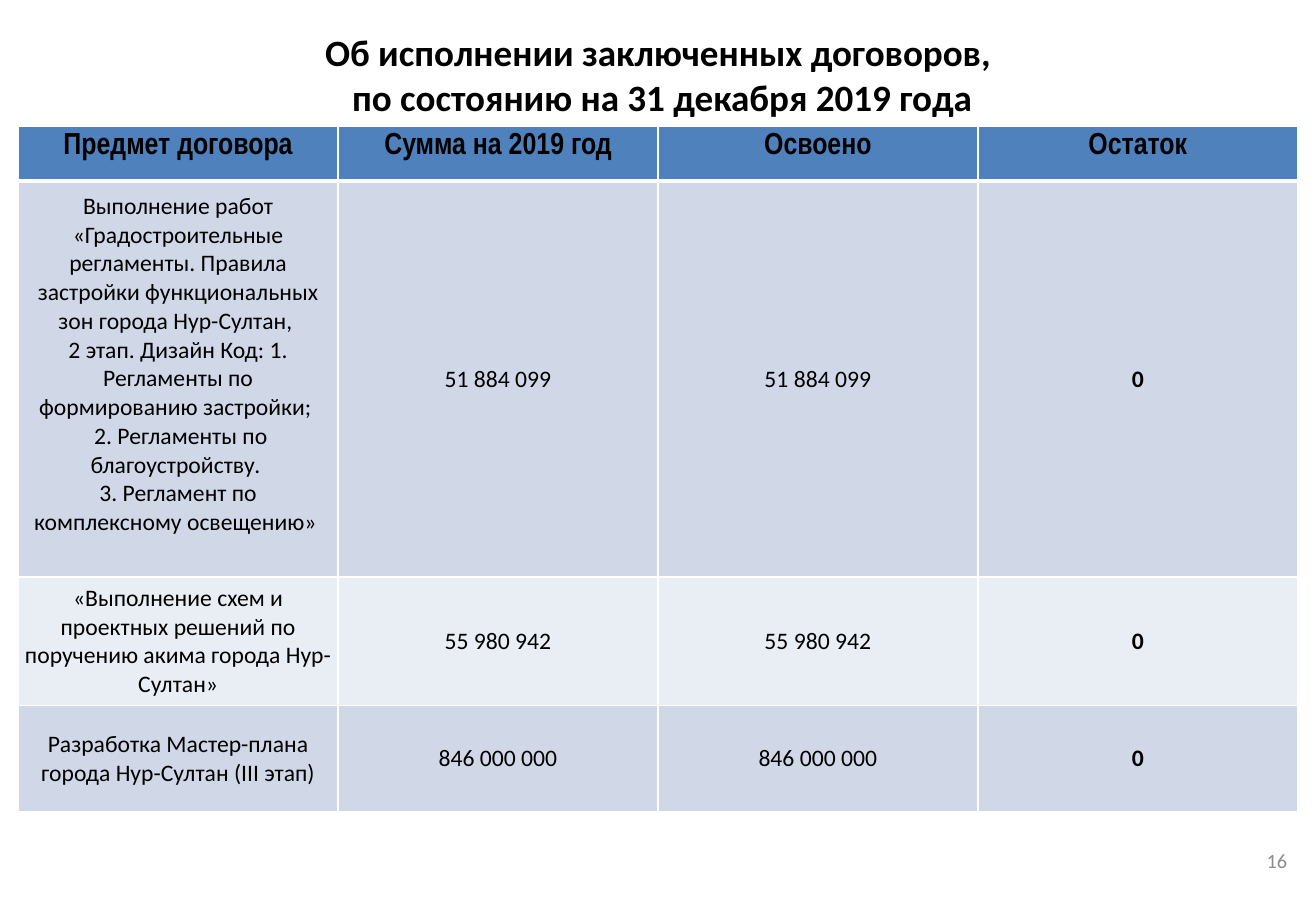
import dataclasses

import lxml.etree
import pptx
import pptx.dml.color
import pptx.enum.text
import pptx.oxml.ns
import pptx.util

PX = 9144  # EMU in one px, 100 px to the inch
ALIGN = pptx.enum.text.PP_ALIGN
ANCHOR = pptx.enum.text.MSO_ANCHOR


@dataclasses.dataclass(frozen=True)
class Theme:
    body_font: str = "Calibri"
    header_font: str = "Arial Narrow"
    ink: str = "000000"
    muted: str = "8C8C8C"
    header_fill: str = "4F81BD"
    bands: tuple = ("D0D8E8", "E9EDF4")
    grid: str = "FFFFFF"
    title_size: int = 22
    header_size: int = 18
    body_size: int = 14
    number_size: int = 12


THEME = Theme()

TITLE = "Об исполнении заключенных договоров,\n по состоянию на 31 декабря 2019 года"
HEADERS = ["Предмет договора", "Сумма на 2019 год", "Освоено", "Остаток"]
# Each contract: subject paragraphs, sum, spent, balance
CONTRACTS = [
    (["Выполнение работ «Градостроительные регламенты. Правила застройки "
      "функциональных зон города Нур-Султан, ",
      "2 этап. Дизайн Код: 1. Регламенты по формированию застройки; \n"
      " 2. Регламенты по благоустройству. ",
      "3. Регламент по комплексному освещению» "],
     "51 884 099", "51 884 099", "0"),
    (["«Выполнение схем и проектных решений по поручению акима города Нур-Султан»"],
     "55 980 942", "55 980 942", "0"),
    (["Разработка Мастер-плана города Нур-Султан (III этап)"],
     "846 000 000", "846 000 000", "0"),
]
ROW_HEIGHTS = [45, 326, 106, 87]
HEADER_INSET = 5  # keeps the headings clear of the table's top edge
LIST_TAIL = 24    # free line under the long list of works
TIGHT_ROW = 2     # row whose text runs nearly edge to edge


def px(length):
    return pptx.util.Emu(length * PX)


def rgb(colour):
    return pptx.dml.color.RGBColor.from_string(colour)


def write(frame, paragraphs, size, align=ALIGN.CENTER, bold=False,
          font=THEME.body_font, colour=THEME.ink):
    """Fill a text frame; a newline inside a paragraph is a line break."""
    for index, content in enumerate(paragraphs):
        paragraph = frame.add_paragraph() if index else frame.paragraphs[0]
        paragraph.alignment = align
        for number, line in enumerate(content.split("\n")):
            if number:
                paragraph.add_line_break()
            run = paragraph.add_run()
            run.text = line
            run.font.name = font
            run.font.size = pptx.util.Pt(size)
            run.font.bold = bold
            run.font.color.rgb = rgb(colour)


def add_label(slide, box, content, size, **style):
    """Text box centred vertically, with even insets."""
    frame = slide.shapes.add_textbox(*map(px, box)).text_frame
    frame.word_wrap = True
    frame.vertical_anchor = ANCHOR.MIDDLE
    frame.margin_left = frame.margin_right = px(10)
    frame.margin_top = frame.margin_bottom = px(10)
    write(frame, [content], size, **style)


def set_borders(cell, top, bottom):
    """White cell borders; widths in points, placed ahead of the fill."""
    properties = cell._tc.get_or_add_tcPr()
    widths = {"a:lnL": 1, "a:lnR": 1, "a:lnT": top, "a:lnB": bottom}
    for index, (tag, width) in enumerate(widths.items()):
        line = lxml.etree.Element(pptx.oxml.ns.qn(tag), w=str(pptx.util.Pt(width)))
        fill = lxml.etree.SubElement(line, pptx.oxml.ns.qn("a:solidFill"))
        lxml.etree.SubElement(fill, pptx.oxml.ns.qn("a:srgbClr"), val=THEME.grid)
        properties.insert(index, line)


def add_contracts(slide, box):
    left, top, width, height = box
    table = slide.shapes.add_table(len(ROW_HEIGHTS), len(HEADERS),
                                   *map(px, box)).table
    for column in table.columns:
        column.width = px(width) // len(HEADERS)
    for row, row_height in zip(table.rows, ROW_HEIGHTS):
        row.height = px(row_height)

    # Header row
    for column, header in enumerate(HEADERS):
        cell = table.cell(0, column)
        cell.margin_top = cell.margin_bottom = px(HEADER_INSET)
        cell.fill.solid()
        cell.fill.fore_color.rgb = rgb(THEME.header_fill)
        set_borders(cell, 1, 3)
        write(cell.text_frame, [header], THEME.header_size,
              bold=True, font=THEME.header_font)

    # Contract rows in alternating bands
    for row, (subject, *amounts) in enumerate(CONTRACTS, start=1):
        for column, paragraphs in enumerate([subject, *([a] for a in amounts)]):
            cell = table.cell(row, column)
            cell.vertical_anchor = ANCHOR.MIDDLE
            cell.margin_top = cell.margin_bottom = 0
            if row == TIGHT_ROW:
                cell.margin_left = cell.margin_right = px(1)
            if len(paragraphs) > 1:
                cell.margin_bottom = px(LIST_TAIL)
            cell.fill.solid()
            cell.fill.fore_color.rgb = rgb(THEME.bands[(row - 1) % 2])
            set_borders(cell, 3 if row == 1 else 1, 1)
            write(cell.text_frame, paragraphs, THEME.body_size,
                  bold=column == len(HEADERS) - 1)


def main():
    deck = pptx.Presentation()
    deck.slide_width, deck.slide_height = px(1083), px(750)
    slide = deck.slides.add_slide(deck.slide_layouts[6])
    # Title
    add_label(slide, (37, 13, 1009, 96), TITLE, THEME.title_size, bold=True)
    # Slide number
    add_label(slide, (1004, 680, 65, 57), "16", THEME.number_size,
              align=ALIGN.RIGHT, colour=THEME.muted)
    # Contracts table
    add_contracts(slide, (15, 104, 1053, sum(ROW_HEIGHTS)))
    deck.save("out.pptx")


if __name__ == "__main__":
    main()
